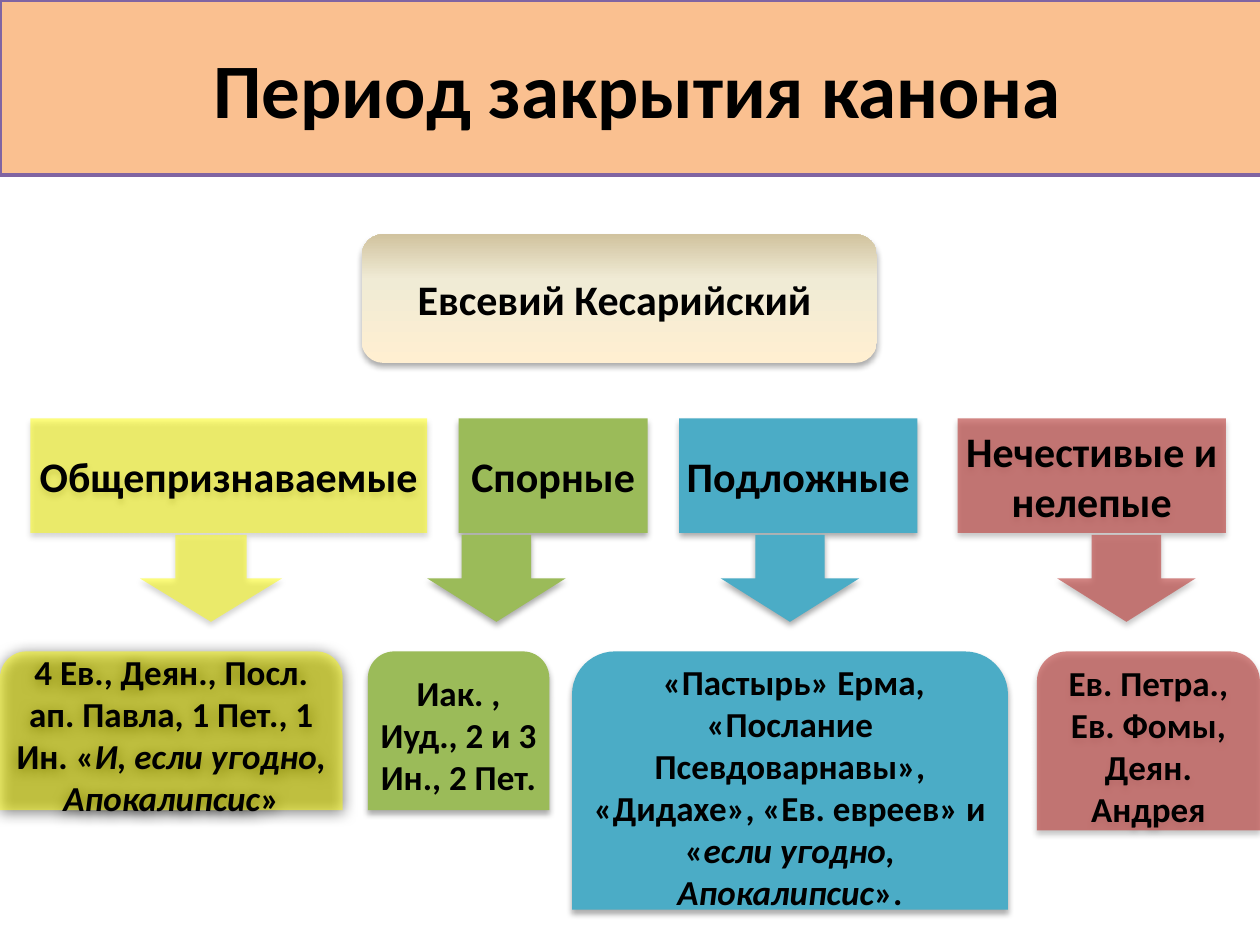
from copy import deepcopy
from dataclasses import dataclass

from lxml.etree import SubElement
from pptx import Presentation
from pptx.dml.color import RGBColor
from pptx.enum.shapes import MSO_SHAPE
from pptx.enum.text import MSO_ANCHOR, PP_ALIGN
from pptx.oxml.ns import qn
from pptx.util import Inches, Pt


@dataclass(frozen=True)
class Theme:
    font: str = "Calibri"
    text: str = "000000"
    banner: str = "FAC090"
    banner_line: str = "8064A2"
    cream: tuple = ((0, "FFEFD1"), (0.65, "F0EBD5"), (1, "D1C39F"))
    yellow: tuple = ("FFFF00", 50)  # colour and opacity in percent
    green: tuple = ("9BBB59", 100)
    blue: tuple = ("4BACC6", 100)
    red: tuple = ("C0504D", 69)
    title_size: int = 44
    label_size: int = 24
    body_size: int = 20
    # opacity in percent, blur and distance in points
    soft_shadow: tuple = (32, 3.5, 2.2)
    strong_shadow: tuple = (100, 8.5, 1)


@dataclass(frozen=True)
class Box:
    """Place on a grid of 100 columns and 75 rows, each 0.1 inch."""
    left: float
    top: float
    width: float
    height: float

    def lengths(self):
        return [Inches(cells / 10) for cells in
                (self.left, self.top, self.width, self.height)]


THEME = Theme()

# Rows shared by all categories
LABEL_TOP, LABEL_HEIGHT = 33.2, 9.1
ARROW_TOP, ARROW_HEIGHT = 42.45, 6.9
BOOKS_TOP = 51.7

# colour; left and width of label, arrow and books; height of books;
# label; books as (text, italic) spans; shadow of books
CATEGORIES = [
    (THEME.yellow, (2.4, 31.5), (11.1, 11.3), (0, 27.2), 12.6,
     "Общепризнаваемые",
     [("4 Ев., Деян., Посл. ап. Павла, 1 Пет., 1 Ин. «", False),
      ("И, если угодно, Апокалипсис", True), ("»", False)],
     THEME.strong_shadow),
    (THEME.green, (36.4, 15), (33.9, 11), (29.2, 14.4), 12.6,
     "Спорные", [("Иак. , Иуд., 2 и 3 Ин., 2 Пет. ", False)],
     THEME.soft_shadow),
    (THEME.blue, (53.9, 18.9), (57.2, 11), (45.4, 34.6), 20.5,
     "Подложные",
     [(" «Пастырь» Ерма, «Послание Псевдоварнавы», "
       "«Дидахе», «Ев. евреев» и «", False),
      ("если угодно, Апокалипсис", True), ("».", False)],
     THEME.soft_shadow),
    (THEME.red, (76, 21.3), (83.9, 11), (82.3, 17.7), 14.2,
     "Нечестивые и нелепые",
     [("Ев. Петра., Ев. Фомы, Деян. Андрея", False)],
     THEME.soft_shadow),
]


def set_fill(shape, colour, opacity=100):
    shape.fill.solid()
    shape.fill.fore_color.rgb = RGBColor.from_string(colour)
    if opacity < 100:
        tint = shape.fill._xPr.find(".//" + qn("a:srgbClr"))
        SubElement(tint, qn("a:alpha"), val=str(opacity * 1000))


def set_gradient(shape, stops):
    shape.fill.gradient()
    shape.fill.gradient_angle = 90
    stop_list = shape.fill._xPr.find(".//" + qn("a:gsLst"))
    stop_list.append(deepcopy(stop_list[0]))
    for stop, (position, colour) in zip(shape.fill.gradient_stops, stops):
        stop.position = position
        stop.color.rgb = RGBColor.from_string(colour)


def set_shadow(shape, opacity, blur, distance):
    shape.shadow.inherit = False
    effects = shape._element.spPr.find(qn("a:effectLst"))
    outer = SubElement(effects, qn("a:outerShdw"), blurRad=str(Pt(blur)),
                       dist=str(Pt(distance)), dir="5400000", rotWithShape="0")
    tint = SubElement(outer, qn("a:srgbClr"), val="000000")
    SubElement(tint, qn("a:alpha"), val=str(opacity * 1000))


def format_span(span, size, italic=False):
    span.font.name = THEME.font
    span.font.size = Pt(size)
    span.font.bold = True
    span.font.italic = italic
    span.font.color.rgb = RGBColor.from_string(THEME.text)


def write(shape, spans, size):
    frame = shape.text_frame
    frame.word_wrap = True
    frame.vertical_anchor = MSO_ANCHOR.MIDDLE
    frame.margin_left = frame.margin_right = Inches(0.04)
    frame.margin_top = frame.margin_bottom = Inches(0.04)
    para = frame.paragraphs[0]
    para.alignment = PP_ALIGN.CENTER
    for text, italic in spans:
        span = para.add_run()
        span.text = text
        format_span(span, size, italic)


def add_block(page, kind, box, shadow=THEME.soft_shadow):
    shape = page.shapes.add_shape(kind, *box.lengths())
    shape.line.fill.background()
    set_shadow(shape, *shadow)
    return shape


def add_banner(page, box):
    title = page.shapes.title
    title.left, title.top, title.width, title.height = box.lengths()
    set_fill(title, THEME.banner)
    title.line.color.rgb = RGBColor.from_string(THEME.banner_line)
    title.line.width = Pt(2)
    title.text_frame.text = "Период закрытия канона"
    title.text_frame.vertical_anchor = MSO_ANCHOR.MIDDLE
    para = title.text_frame.paragraphs[0]
    para.alignment = PP_ALIGN.CENTER
    format_span(para.runs[0], THEME.title_size)


def add_author(page, box):
    author = add_block(page, MSO_SHAPE.ROUNDED_RECTANGLE, box)
    set_gradient(author, THEME.cream)
    write(author, [("Евсевий Кесарийский ", False)], THEME.label_size)


def add_category(page, colour, label_box, arrow_box, books_box,
                 label_text, books_spans, books_shadow):
    label = add_block(page, MSO_SHAPE.RECTANGLE, label_box)
    arrow = add_block(page, MSO_SHAPE.DOWN_ARROW, arrow_box)
    books = add_block(page, MSO_SHAPE.ROUND_2_SAME_RECTANGLE,
                      books_box, books_shadow)
    for shape in (label, arrow, books):
        set_fill(shape, *colour)
    write(label, [(label_text, False)], THEME.label_size)
    write(books, books_spans, THEME.body_size)


def main():
    deck = Presentation()
    deck.slide_width, deck.slide_height = Inches(10), Inches(7.5)
    page = deck.slides.add_slide(deck.slide_layouts[5])

    # Title and author
    add_banner(page, Box(0, 0, 101.2, 13.9))
    add_author(page, Box(28.7, 18.6, 40.9, 10.2))

    # Categories with their books
    for (colour, label, arrow, books, books_height,
         label_text, books_spans, books_shadow) in CATEGORIES:
        add_category(
            page, colour,
            Box(label[0], LABEL_TOP, label[1], LABEL_HEIGHT),
            Box(arrow[0], ARROW_TOP, arrow[1], ARROW_HEIGHT),
            Box(books[0], BOOKS_TOP, books[1], books_height),
            label_text, books_spans, books_shadow)

    deck.save("out.pptx")


if __name__ == "__main__":
    main()
